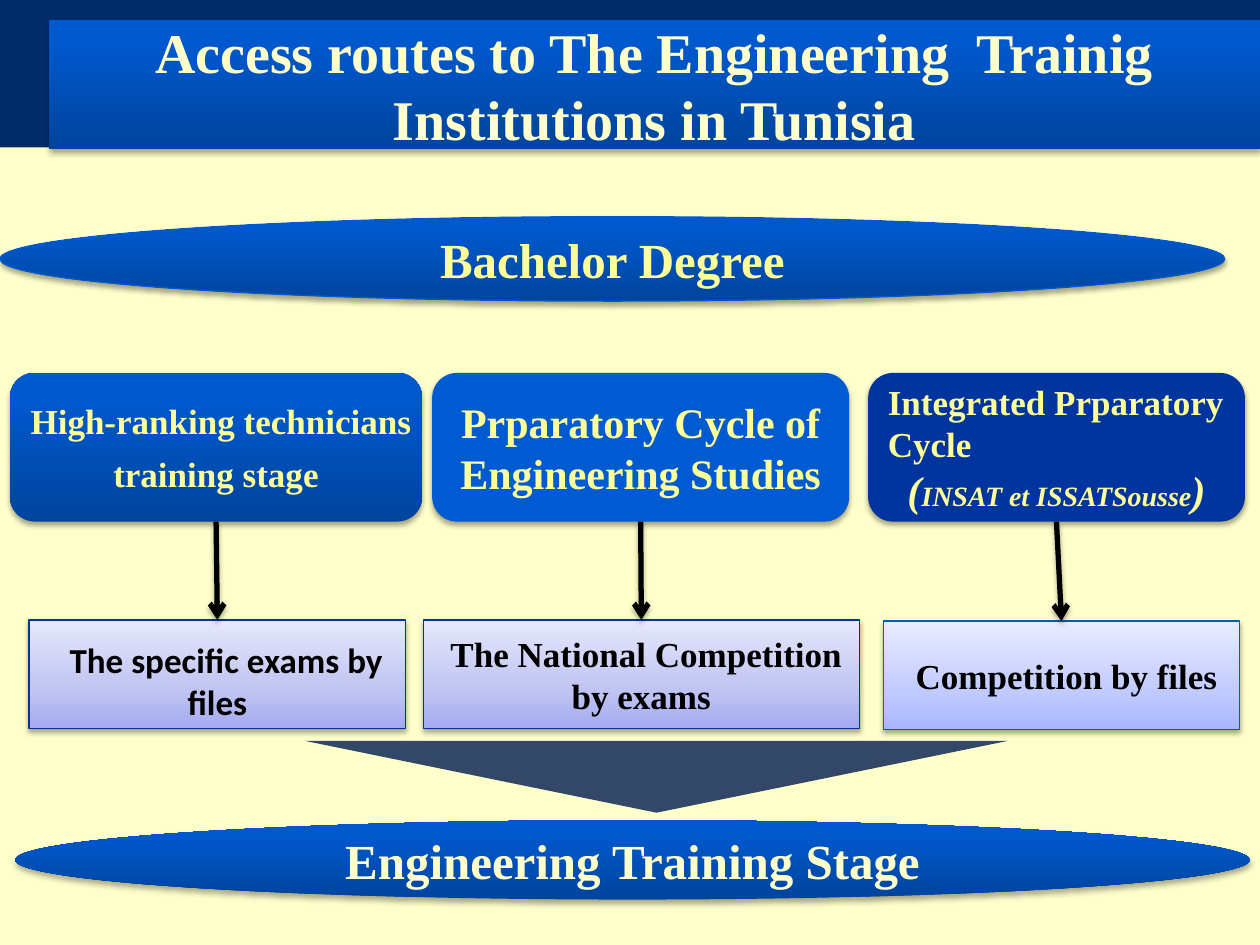
from lxml import etree
from pptx import Presentation
from pptx.dml.color import RGBColor
from pptx.enum.shapes import MSO_CONNECTOR, MSO_SHAPE
from pptx.enum.text import MSO_ANCHOR, MSO_AUTO_SIZE, PP_ALIGN
from pptx.oxml.ns import qn
from pptx.util import Inches, Pt

RECT, ROUND = MSO_SHAPE.RECTANGLE, MSO_SHAPE.ROUNDED_RECTANGLE
OVAL, WEDGE = MSO_SHAPE.OVAL, MSO_SHAPE.ISOSCELES_TRIANGLE
LINE = MSO_CONNECTOR.STRAIGHT
LEFT, MID = PP_ALIGN.LEFT, PP_ALIGN.CENTER
SERIF, SANS = "Times New Roman", "Calibri"
COLORS = {
    "navy": "002D6A", "cream": "FFFFCC", "lemon": "FFFF99", "black": "000000",
    "blue": "005BD3", "royal": "00349E", "wedge": "001A4F",
    "edge": "00339B", "rim": "0059CE",
}
# Stops run from the bottom edge to the top edge
FADES = {
    "deep": ((0, "00449D"), (80, "0058CC"), (100, "0059CD")),
    "lilac": ((0, "A4AAEF"), (35, "C0C4F2"), (100, "E6E8FB")),
    "sky": ((0, "A8B6FF"), (35, "C2CBFF"), (100, "E8EBFF")),
}


def rgb(name):
    return RGBColor.from_string(COLORS[name])


def add_node(parent, tag, **attrs):
    return etree.SubElement(parent, qn(tag), {k: str(v) for k, v in attrs.items()})


def add_color(parent, value, alpha=100):
    node = add_node(parent, "a:srgbClr", val=value)
    if alpha < 100:
        add_node(node, "a:alpha", val=alpha * 1000)


def add_shade(props, alpha=35):
    """Soft shadow below the element."""
    effects = props.find(qn("a:effectLst"))
    if effects is None:
        effects = add_node(props, "a:effectLst")
    outer = add_node(effects, "a:outerShdw", blurRad=Pt(3.1), dist=Pt(1.8),
                     dir=5400000, rotWithShape=0)
    add_color(outer, COLORS["black"], alpha)


def paint(shape, fill, line=None, shade=True):
    """Fill with a plain colour or a fade, then outline and shadow."""
    if fill in FADES:
        shape.fill.gradient()
        shape.fill.gradient_angle = 90
        stops = next(shape._element.spPr.iter(qn("a:gsLst")))
        for stop in list(stops):
            stops.remove(stop)
        for pos, value in FADES[fill]:
            add_color(add_node(stops, "a:gs", pos=pos * 1000), value)
    else:
        shape.fill.solid()
        shape.fill.fore_color.rgb = rgb(fill)
    if line:
        shape.line.color.rgb = rgb(line)
        shape.line.width = Pt(0.75)
    else:
        shape.line.fill.background()
    shape.shadow.inherit = False
    if shade:
        add_shade(shape._element.spPr)


def add_box(slide, kind, at, fill, line=None, shade=True):
    shape = slide.shapes.add_shape(kind, *map(Inches, at))
    paint(shape, fill, line, shade)
    return shape


def write(shape, *lines, size=20, color="lemon", font=SERIF, aligns=(), leads=(),
          after=0, side=0.1, top=0.05):
    """Each line is a string or a list of (text, size) runs set in italics."""
    frame = shape.text_frame
    frame.word_wrap = True
    frame.auto_size = MSO_AUTO_SIZE.NONE
    frame.vertical_anchor = MSO_ANCHOR.MIDDLE
    frame.margin_left = frame.margin_right = Inches(side)
    frame.margin_top, frame.margin_bottom = Inches(top), Inches(0.05)
    for i, line in enumerate(lines):
        para = frame.paragraphs[0] if i == 0 else frame.add_paragraph()
        para.alignment = aligns[i] if i < len(aligns) else MID
        para.space_before, para.space_after = Pt(0), Pt(after)
        if i < len(leads):
            para._p.get_or_add_pPr().set("marL", str(Inches(leads[i])))
        plain = isinstance(line, str)
        for text, points in [(line, size)] if plain else line:
            run = para.add_run()
            run.text = text
            run.font.size, run.font.name = Pt(points), font
            run.font.bold, run.font.italic = True, not plain
            run.font.color.rgb = rgb(color)


def add_arrow(slide, start, end):
    arrow = slide.shapes.add_connector(LINE, 0, 0, 0, 0)
    arrow.begin_connect(start, 2)
    arrow.end_connect(end, 0)
    arrow.line.color.rgb = rgb("black")
    arrow.line.width = Pt(3)
    add_node(arrow.line._get_or_add_ln(), "a:tailEnd", type="arrow")
    add_shade(arrow._element.spPr)


def add_title(slide, text):
    title = slide.shapes.title
    title.left, title.top = Inches(0.39), Inches(0.16)
    title.width, title.height = Inches(9.61), Inches(1.02)
    geom = add_node(title._element.spPr, "a:prstGeom", prst="roundRect")
    add_node(geom, "a:avLst")
    paint(title, "deep")
    write(title, text, size=32, color="cream", side=0.04)
    slide.shapes._spTree.append(title._element)  # bring to front


def main():
    deck = Presentation()
    deck.slide_width, deck.slide_height = Inches(10), Inches(7.5)
    slide = deck.slides.add_slide(deck.slide_layouts[5])

    # Backdrop
    slide.background.fill.solid()
    slide.background.fill.fore_color.rgb = rgb("navy")
    add_box(slide, RECT, (0, 1.17, 10, 6.33), "cream", shade=False)

    # Start and goal
    start = add_box(slide, OVAL, (0, 1.72, 9.72, 0.67), "deep", "rim")
    write(start, "Bachelor Degree", size=28)
    goal = add_box(slide, OVAL, (0.12, 6.51, 9.8, 0.63), "deep")
    write(goal, "Engineering Training Stage", size=28, color="cream")
    wedge = add_box(slide, WEDGE, (2.42, 5.88, 5.58, 0.57), "wedge", shade=False)
    wedge.rotation = 180
    tint = next(wedge._element.spPr.iter(qn("a:srgbClr")))
    add_node(tint, "a:alpha", val=80000)

    # Training stages
    stages = [add_box(slide, ROUND, (x, 2.96, w, 1.18), fill) for x, w, fill in (
        (0.08, 3.27, "deep"), (3.43, 3.31, "blue"), (6.89, 2.99, "royal"))]
    write(stages[0], "High-ranking technicians", "training stage",
          leads=[0.08], after=6, side=0)
    write(stages[1], "Prparatory Cycle of Engineering Studies", size=24, side=0.04)
    write(stages[2], "Integrated Prparatory Cycle",
          [("(", 24), ("INSAT et ISSATSousse", 16), (")", 24)], aligns=[LEFT])

    # Entrance exams
    exams = [add_box(slide, RECT, (x, y, w, 0.86), fill, line)
             for x, y, w, fill, line in (
                 (0.23, 4.92, 2.99, "lilac", "edge"),
                 (3.36, 4.92, 3.46, "lilac", "edge"),
                 (7.01, 4.93, 2.83, "sky", "rim"))]
    write(exams[0], "The specific exams by", "files", color="black", font=SANS,
          leads=[0.14], top=0.15)
    write(exams[1], "The National Competition", "by exams", color="black",
          leads=[0.08])
    write(exams[2], "Competition by files", color="black", leads=[0.08])

    for stage, exam in zip(stages, exams):
        add_arrow(slide, stage, exam)

    add_title(slide, "Access routes to The Engineering  Trainig Institutions in Tunisia")
    deck.save("out.pptx")


if __name__ == "__main__":
    main()
